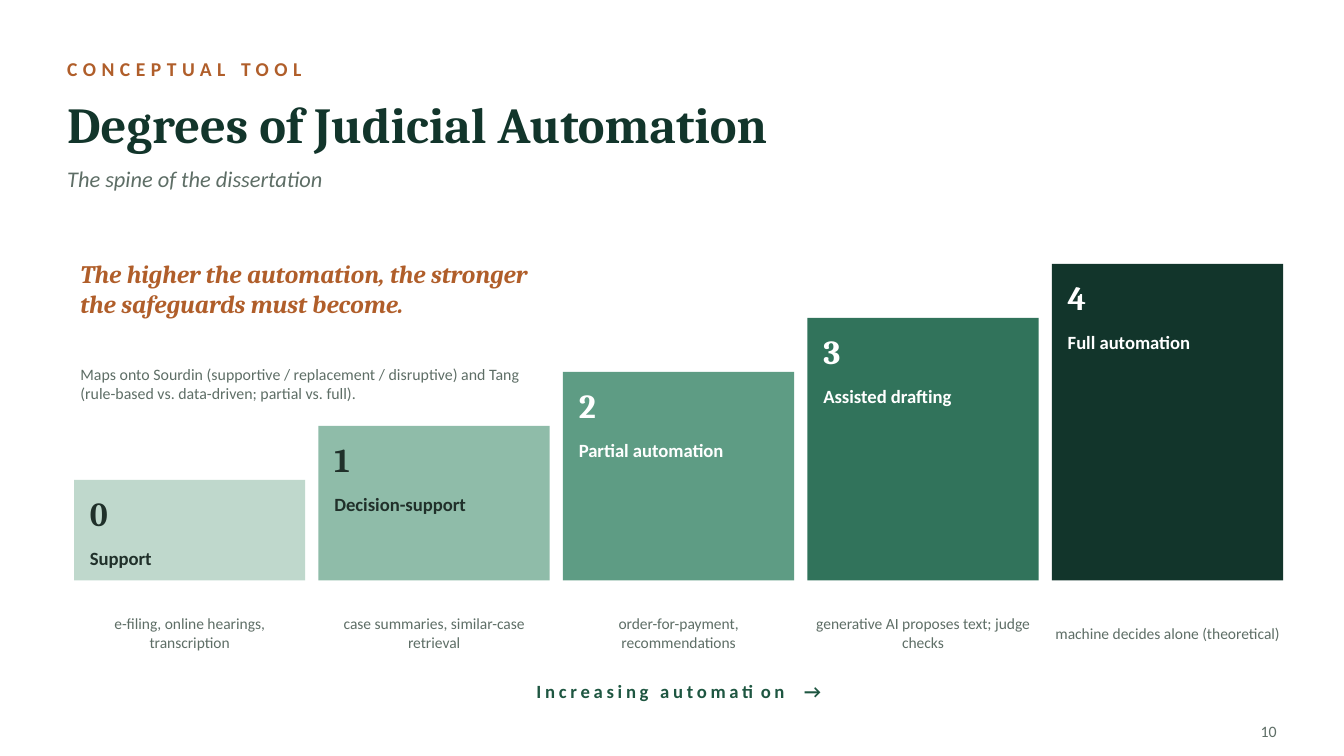
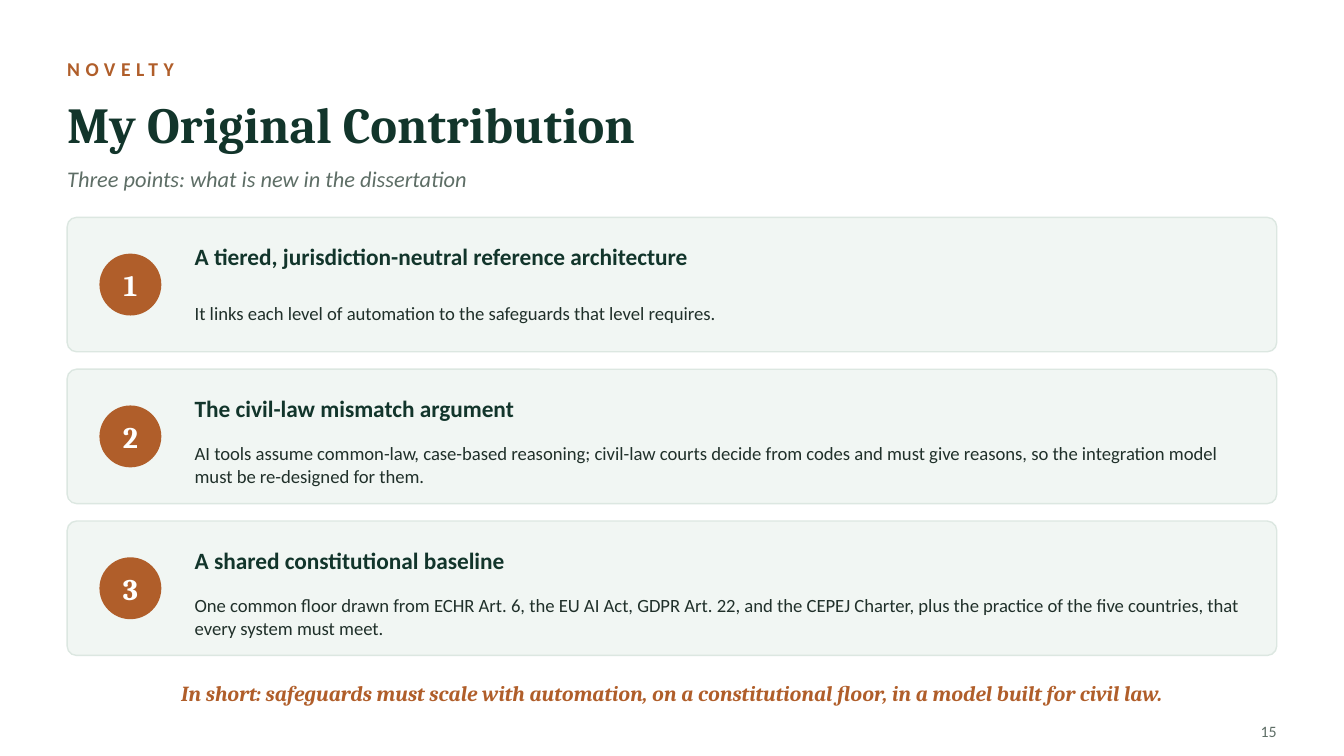
"""Build two dissertation slides: the automation staircase and the contribution cards."""
from pptx import Presentation
from pptx.dml.color import RGBColor
from pptx.enum.shapes import MSO_SHAPE
from pptx.enum.text import MSO_ANCHOR, PP_ALIGN
from pptx.util import Cm, Pt

RECT, ROUNDED, OVAL = MSO_SHAPE.RECTANGLE, MSO_SHAPE.ROUNDED_RECTANGLE, MSO_SHAPE.OVAL
MIDDLE = MSO_ANCHOR.MIDDLE
LEFT, CENTER, RIGHT = PP_ALIGN.LEFT, PP_ALIGN.CENTER, PP_ALIGN.RIGHT
SANS, SERIF = "Calibri", "Cambria"

COLORS = {
    "white": "FFFFFF", "ink": "20302A", "muted": "5E6E66", "dark": "12352B",
    "green": "1E5641", "accent": "B05E2A", "card": "F1F6F3", "border": "DCE7E1",
    "step0": "BFD8CC", "step1": "8FBCA9", "step2": "5E9C84", "step3": "31735B",
}

STAIRCASE = {
    "kicker": "CONCEPTUAL TOOL",
    "title": "Degrees of Judicial Automation",
    "subtitle": "The spine of the dissertation",
    "page": "10",
    "claim": "The higher the automation, the stronger the safeguards must become.",
    "mapping": "Maps onto Sourdin (supportive / replacement / disruptive) and Tang "
               "(rule-based vs. data-driven; partial vs. full).",
    "axis": "Increasing automation  →",
    "steps": [
        ("Support", "e-filing, online hearings, transcription", "step0", "ink"),
        ("Decision-support", "case summaries, similar-case retrieval", "step1", "ink"),
        ("Partial automation", "order-for-payment, recommendations", "step2", "white"),
        ("Assisted drafting", "generative AI proposes text; judge checks", "step3", "white"),
        ("Full automation", "machine decides alone (theoretical)", "dark", "white"),
    ],
}

CONTRIBUTION = {
    "kicker": "NOVELTY",
    "title": "My Original Contribution",
    "subtitle": "Three points: what is new in the dissertation",
    "page": "15",
    "points": [
        ("A tiered, jurisdiction-neutral reference architecture",
         "It links each level of automation to the safeguards that level requires."),
        ("The civil-law mismatch argument",
         "AI tools assume common-law, case-based reasoning; civil-law courts decide from codes "
         "and must give reasons, so the integration model must be re-designed for them."),
        ("A shared constitutional baseline",
         "One common floor drawn from ECHR Art. 6, the EU AI Act, GDPR Art. 22, and the CEPEJ "
         "Charter, plus the practice of the five countries, that every system must meet."),
    ],
    "summary": "In short: safeguards must scale with automation, on a constitutional floor, "
               "in a model built for civil law.",
}

MARGIN, CONTENT_W = 1.27, 22.86
CLOSING_Y = 12.75
STEP_X, STEP_W, STEP_PITCH = 1.4, 4.37, 4.62
STEP_BASE, STEP_MIN_H, STEP_RISE = 10.97, 1.9, 1.02
STEP_PAD, NOTE_PAD = 0.3, 0.05
CARD_Y, CARD_H, CARD_PITCH = 4.11, 2.54, 2.87
BADGE_X, BADGE_SIZE = 1.88, 1.17
POINT_X, POINT_W = 3.68, 19.94


def rgb(name):
    return RGBColor.from_string(COLORS[name])


def write(sp, text, size, color, font=SANS, bold=False, italic=False, align=LEFT, spacing=0):
    tf = sp.text_frame
    tf.text = text
    tf.word_wrap = True
    tf.vertical_anchor = MIDDLE
    tf.margin_left = tf.margin_right = tf.margin_top = tf.margin_bottom = 0
    p = tf.paragraphs[0]
    p.alignment = align
    r = p.runs[0]
    r.font.name, r.font.size = font, Pt(size)
    r.font.bold, r.font.italic = bold, italic
    r.font.color.rgb = rgb(color)
    if spacing:
        r._r.get_or_add_rPr().set("spc", str(spacing * 100))


def add_text(s, x, y, w, h, text, size, color, **style):
    sp = s.shapes.add_textbox(Cm(x), Cm(y), Cm(w), Cm(h))
    write(sp, text, size, color, **style)


def add_block(s, kind, x, y, w, h, fill, line=None):
    sp = s.shapes.add_shape(kind, Cm(x), Cm(y), Cm(w), Cm(h))
    sp.shadow.inherit = False
    sp.fill.solid()
    sp.fill.fore_color.rgb = rgb(fill)
    if line:
        sp.line.color.rgb = rgb(line)
        sp.line.width = Pt(0.75)
    else:
        sp.line.fill.background()
    return sp


def add_slide(prs, content):
    s = prs.slides.add_slide(prs.slide_layouts[6])
    s.background.fill.solid()
    s.background.fill.fore_color.rgb = rgb("white")
    add_text(s, MARGIN, 0.97, CONTENT_W, 0.66, content["kicker"], 10.5, "accent",
             bold=True, spacing=3)
    add_text(s, MARGIN, 1.68, CONTENT_W, 1.32, content["title"], 27, "dark",
             font=SERIF, bold=True)
    add_text(s, MARGIN, 3, CONTENT_W, 0.76, content["subtitle"], 12, "muted", italic=True)
    add_text(s, 23.11, 13.54, 1.02, 0.56, content["page"], 8.5, "muted", align=RIGHT)
    return s


def build_staircase(prs):
    s = add_slide(prs, STAIRCASE)
    for level, (label, note, fill, ink) in enumerate(STAIRCASE["steps"]):
        x = STEP_X + level * STEP_PITCH
        h = STEP_MIN_H + level * STEP_RISE
        y = STEP_BASE - h
        text_w = STEP_W - 2 * STEP_PAD
        add_block(s, RECT, x, y, STEP_W, h, fill)
        add_text(s, x + STEP_PAD, y + 0.2, text_w, 0.86, str(level), 18, ink,
                 font=SERIF, bold=True)
        add_text(s, x + STEP_PAD, y + 1.07, text_w, 0.81, label, 10, ink, bold=True)
        add_text(s, x + NOTE_PAD, 11.18, STEP_W - 2 * NOTE_PAD, 1.57, note, 8.3, "muted",
                 align=CENTER)
    add_text(s, STEP_X, CLOSING_Y, CONTENT_W, 0.61, STAIRCASE["axis"], 10, "green",
             bold=True, align=CENTER, spacing=2)
    add_text(s, 1.52, 4.37, 8.64, 2.16, STAIRCASE["claim"], 13.5, "accent",
             font=SERIF, bold=True, italic=True)
    add_text(s, 1.52, 6.6, 8.76, 1.32, STAIRCASE["mapping"], 8.5, "muted")


def build_contribution(prs):
    s = add_slide(prs, CONTRIBUTION)
    for i, (heading, body) in enumerate(CONTRIBUTION["points"]):
        y = CARD_Y + i * CARD_PITCH
        card = add_block(s, ROUNDED, MARGIN, y, CONTENT_W, CARD_H, "card", "border")
        card.adjustments[0] = 0.07
        badge = add_block(s, OVAL, BADGE_X, y + (CARD_H - BADGE_SIZE) / 2,
                          BADGE_SIZE, BADGE_SIZE, "accent")
        write(badge, str(i + 1), 16, "white", font=SERIF, bold=True, align=CENTER)
        add_text(s, POINT_X, y + 0.36, POINT_W, 0.76, heading, 12.5, "dark", bold=True)
        add_text(s, POINT_X, y + 1.17, POINT_W, 1.27, body, 10, "ink")
    add_text(s, MARGIN, CLOSING_Y, CONTENT_W, 0.71, CONTRIBUTION["summary"], 11.5, "accent",
             font=SERIF, bold=True, italic=True, align=CENTER)


def main():
    prs = Presentation()
    prs.slide_width, prs.slide_height = Cm(25.4), Cm(14.29)
    build_staircase(prs)
    build_contribution(prs)
    prs.save("out.pptx")


if __name__ == "__main__":
    main()
